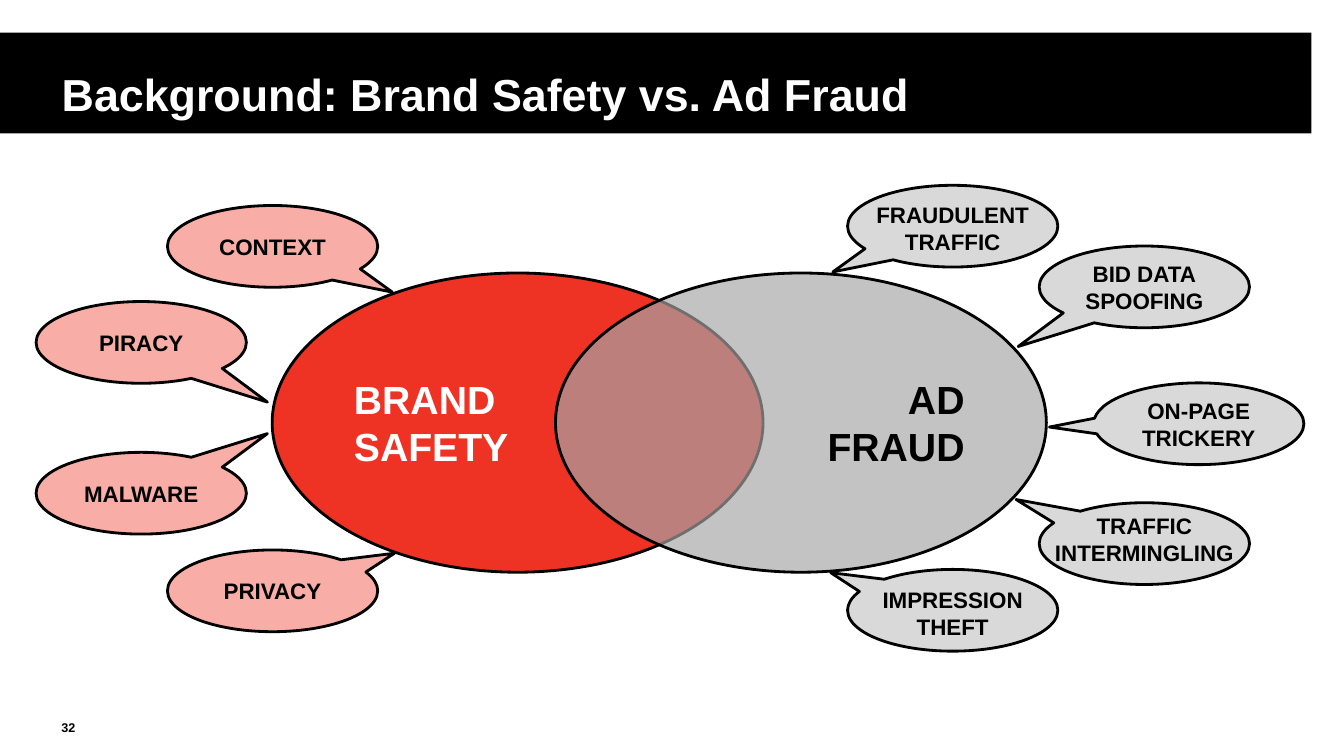
from lxml import etree
from pptx import Presentation
from pptx.dml.color import RGBColor
from pptx.enum.shapes import MSO_SHAPE
from pptx.enum.text import MSO_ANCHOR, MSO_AUTO_SIZE, PP_ALIGN
from pptx.oxml.ns import qn
from pptx.util import Cm, Pt

BLACK = RGBColor(0x00, 0x00, 0x00)
WHITE = RGBColor(0xFF, 0xFF, 0xFF)
RED = RGBColor(0xEE, 0x32, 0x24)
GRAY = RGBColor(0xA6, 0xA6, 0xA6)
PINK = RGBColor(0xF8, 0xAD, 0xA7)
LIGHT_GRAY = RGBColor(0xD9, 0xD9, 0xD9)
RECTANGLE, ELLIPSE, CALLOUT = MSO_SHAPE.RECTANGLE, MSO_SHAPE.OVAL, MSO_SHAPE.OVAL_CALLOUT
LEFT, CENTER, RIGHT = PP_ALIGN.LEFT, PP_ALIGN.CENTER, PP_ALIGN.RIGHT
MIDDLE, BOTTOM = MSO_ANCHOR.MIDDLE, MSO_ANCHOR.BOTTOM


def write(frame, text, size, color, align, anchor=MIDDLE):
    frame.text = text
    frame.vertical_anchor = anchor
    for paragraph in frame.paragraphs:
        paragraph.alignment = align
        font = paragraph.font
        font.name, font.size, font.bold = "Arial", Pt(size), True
        font.color.rgb = color


def add_outlined(kind, left, top, width, height, fill):
    shape = slide.shapes.add_shape(kind, Cm(left), Cm(top), Cm(width), Cm(height))
    shape.shadow.inherit = False
    shape.fill.solid()
    shape.fill.fore_color.rgb = fill
    shape.line.color.rgb = BLACK
    shape.line.width = Pt(2)
    return shape


prs = Presentation()
prs.slide_width, prs.slide_height = Cm(33.87), Cm(19.05)
slide = prs.slides.add_slide(prs.slide_layouts[5])

# Title on a black band, which goes behind everything else
band = add_outlined(RECTANGLE, 0, 0.82, 33.05, 2.54, BLACK)
band.line.fill.background()
slide.shapes._spTree.insert(2, band._element)

title = slide.shapes.title
title.left, title.top, title.width, title.height = Cm(1.3), Cm(1.12), Cm(30.53), Cm(2.06)
write(title.text_frame, "Background: Brand Safety vs. Ad Fraud", 32, WHITE, LEFT, BOTTOM)
title.text_frame.auto_size = MSO_AUTO_SIZE.NONE
title.text_frame.paragraphs[0].line_spacing = 0.85

# Overlapping topics
brand_safety = add_outlined(ELLIPSE, 6.86, 6.88, 12.37, 7.54, RED)
write(brand_safety.text_frame, "BRAND\nSAFETY", 28, WHITE, LEFT)

ad_fraud = add_outlined(ELLIPSE, 14, 6.88, 12.37, 7.54, GRAY)
write(ad_fraud.text_frame, "AD\nFRAUD", 28, BLACK, RIGHT)
fill_color = ad_fraud._element.spPr.find(qn("a:solidFill"))[0]
etree.SubElement(fill_color, qn("a:alpha")).set("val", "67000")

# Callouts: label, left, top, pointer tip relative to the centre, label shift down, fill
risks = [
    ("CONTEXT", 4.22, 5.18, 0.57, 0.56, 0, PINK),
    ("PIRACY", 0.91, 7.6, 0.6, 0.73, 0, PINK),
    ("MALWARE", 0.91, 11.4, 0.6, -0.73, 0, PINK),
    ("PRIVACY", 4.22, 13.86, 0.58, -0.46, 0, PINK),
    ("FRAUDULENT\nTRAFFIC", 21.36, 4.67, -0.57, 0.56, 0.05, LIGHT_GRAY),
    ("BID DATA\nSPOOFING", 26.19, 6.2, -0.6, 0.73, 0, LIGHT_GRAY),
    ("ON-PAGE\nTRICKERY", 27.56, 9.65, -0.71, 0.04, 0, LIGHT_GRAY),
    ("TRAFFIC\nINTERMINGLING", 26.19, 12.67, -0.61, -0.54, -0.12, LIGHT_GRAY),
    ("IMPRESSION\nTHEFT", 21.36, 14.35, -0.58, -0.46, 0.07, LIGHT_GRAY),
]
for label, left, top, tip_x, tip_y, shift, fill in risks:
    risk = add_outlined(CALLOUT, left, top, 5.3, 2.06, fill)
    risk.adjustments[0], risk.adjustments[1] = tip_x, tip_y
    write(risk.text_frame, label, 16, BLACK, CENTER)
    risk.text_frame.word_wrap = False
    risk.text_frame.margin_top = Cm(0.13 + shift)
    risk.text_frame.margin_bottom = Cm(0.13 - shift)

# Slide number
page_number = slide.shapes.add_textbox(Cm(1.3), Cm(17.91), Cm(1.09), Cm(0.89))
write(page_number.text_frame, "32", 9, BLACK, LEFT)
page_number.text_frame.word_wrap = True
page_number.text_frame.paragraphs[0].line_spacing = 0.85

prs.save("out.pptx")
